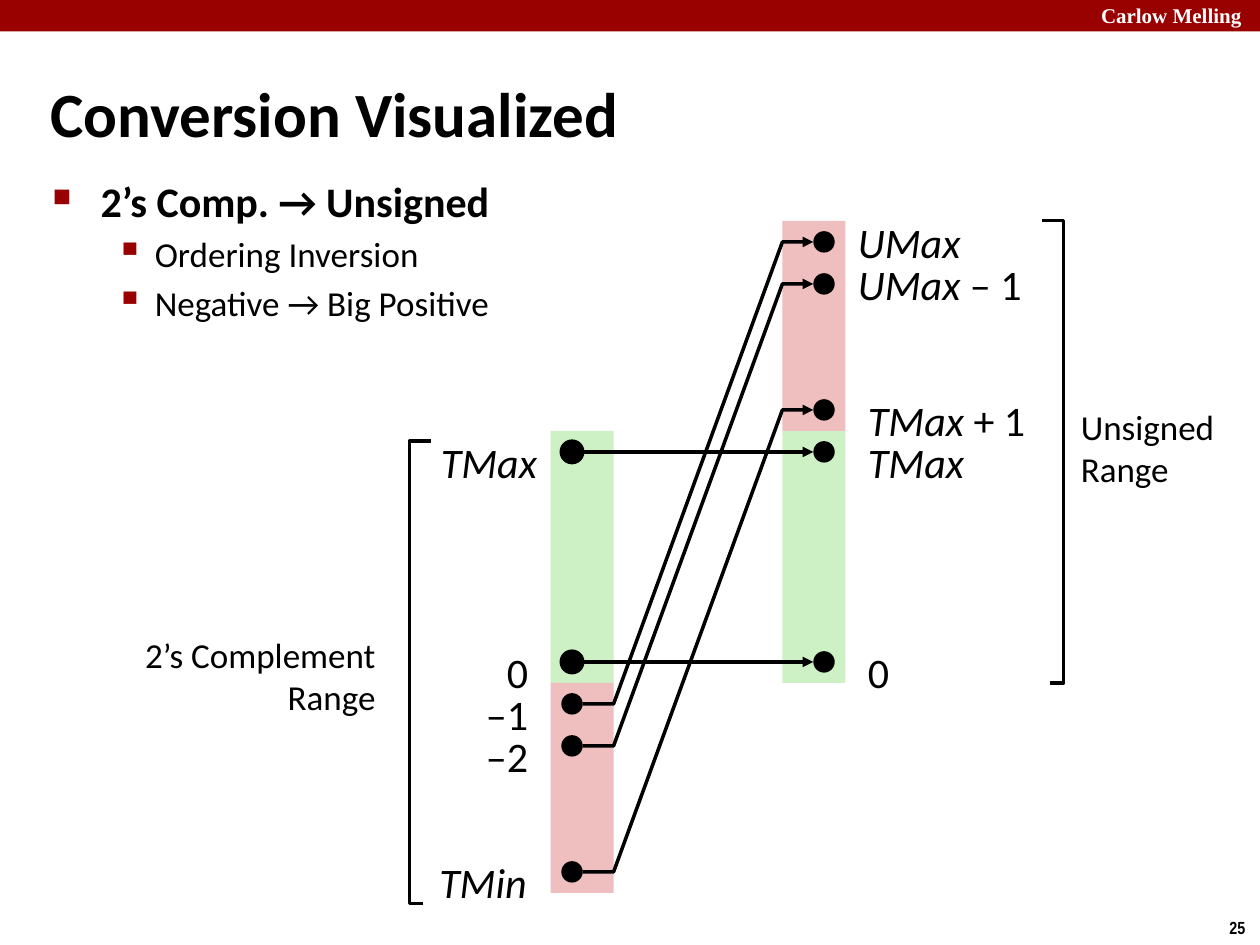
from lxml.etree import SubElement
from pptx import Presentation
from pptx.dml.color import RGBColor
from pptx.enum.shapes import MSO_CONNECTOR, MSO_SHAPE
from pptx.enum.text import MSO_ANCHOR, PP_ALIGN
from pptx.oxml.ns import qn
from pptx.util import Inches, Pt

BLACK, WHITE, RED = "000000", "FFFFFF", "990000"
GREEN_BAND, RED_BAND = "CDF1C5", "EFBFBF"

# The number scale: one row per value, counted down from UMax
FIRST_ROW, ROW = 1.92, 1 / 3
UMAX, UMAX_1, TMAX_1, TMAX, ZERO, MINUS_1, MINUS_2, TMIN = 0, 1, 4, 5, 10, 11, 12, 15
SIGNED_X, UNSIGNED_X, BAR_WIDTH = 4.37, 6.21, 0.5
SIGNED_DOT, UNSIGNED_DOT, DOT = 4.54, 6.54, 0.17

# left edge, first row, last row, colour
BANDS = [
    (UNSIGNED_X, TMAX, ZERO, GREEN_BAND),
    (SIGNED_X, TMAX, ZERO, GREEN_BAND),
    (SIGNED_X, MINUS_1, TMIN, RED_BAND),
    (UNSIGNED_X, UMAX, TMAX_1, RED_BAND),
]
# signed row, unsigned row
MAPPINGS = [(ZERO, ZERO), (TMAX, TMAX), (MINUS_1, UMAX), (MINUS_2, UMAX_1), (TMIN, TMAX_1)]

# row, left, width, rise above the row, italic part, upright part
SIGNED_LABELS = [
    (TMAX, 3.39, 0.97, 0.17, "TMax", ""),
    (ZERO, 3.46, 0.83, 0.17, "", "0"),
    (MINUS_1, 3.46, 0.83, 0.17, "", "–1"),
    (MINUS_2, 3.46, 0.83, 0.17, "", "–2"),
    (TMIN, 3.38, 0.9, 0.17, "TMin", ""),
]
UNSIGNED_LABELS = [
    (UMAX, 6.71, 1.25, 0.25, "UMax", ""),
    (UMAX_1, 6.71, 1.58, 0.25, "UMax", " – 1"),
    (TMAX_1, 6.79, 1.54, 0.17, "TMax", " + 1"),
    (TMAX, 6.79, 0.97, 0.17, "TMax", ""),
    (ZERO, 6.79, 0.83, 0.17, "", "0"),
]
BRACKETS = [
    [(3.36, 7.17), (3.25, 7.17), (3.25, 3.5), (3.42, 3.5)],
    [(8.33, 5.42), (8.44, 5.42), (8.44, 1.75), (8.27, 1.75)],
]
# text, level, size, marker, marker size in percent, left indent, hanging indent
BULLETS = [
    ("2’s Comp. → Unsigned", 0, 24, "■", 60, 0.38, 0.38),
    ("Ordering Inversion", 1, 20, "▪", 110, 0.81, 0.31),
    ("Negative → Big Positive", 1, 20, "▪", 110, 0.81, 0.31),
]

deck = Presentation()
deck.slide_width, deck.slide_height = Inches(10), Inches(7.5)
page = deck.slides.add_slide(deck.slide_layouts[6])


def color(value):
    return RGBColor.from_string(value)


def row_y(row):
    return FIRST_ROW + row * ROW


def add_filled(kind, left, top, width, height, fill, outlined=False):
    shape = page.shapes.add_shape(kind, *map(Inches, (left, top, width, height)))
    shape.shadow.inherit = False
    shape.fill.solid()
    shape.fill.fore_color.rgb = color(fill)
    if outlined:
        style_line(shape)
    else:
        shape.line.fill.background()


def style_line(shape, arrow=False):
    shape.line.color.rgb = color(BLACK)
    shape.line.width = Pt(2)
    if arrow:
        SubElement(shape.line._get_or_add_ln(), qn("a:tailEnd"), type="triangle")


def add_path(points, arrow=False):
    """Draw an open, unfilled line through the points."""
    corners = [(Inches(x), Inches(y)) for x, y in points]
    builder = page.shapes.build_freeform(*corners[0])
    builder.add_line_segments(corners[1:], close=False)
    shape = builder.convert_to_shape()
    shape.shadow.inherit = False
    shape.fill.background()
    style_line(shape, arrow)


def add_arrow(start, end):
    connector = page.shapes.add_connector(
        MSO_CONNECTOR.STRAIGHT, *map(Inches, (*start, *end)))
    style_line(connector, arrow=True)
    SubElement(connector._element.spPr, qn("a:effectLst"))


def style_font(font, size, name="Calibri", fill=BLACK, bold=False, italic=False):
    font.size, font.name, font.bold, font.italic = Pt(size), name, bold, italic
    font.color.rgb = color(fill)


def add_box(left, top, width, height, wrap=True):
    box = page.shapes.add_textbox(*map(Inches, (left, top, width, height)))
    box.text_frame.word_wrap = wrap
    return box.text_frame


def add_text(place, text, size, align=PP_ALIGN.LEFT, wrap=True, **style):
    frame = add_box(*place, wrap=wrap)
    frame.text = text
    for para in frame.paragraphs:
        para.alignment = align
        for span in para.runs:
            style_font(span.font, size, **style)
    return frame


def add_label(label, align):
    row, left, width, rise, italic_part, upright_part = label
    para = add_box(left, row_y(row) - rise, width, 0.51).paragraphs[0]
    para.alignment = align
    for text, italic in ((italic_part, True), (upright_part, False)):
        if text:
            span = para.add_run()
            span.text = text
            style_font(span.font, 24, italic=italic)


def add_bullets(place):
    frame = add_box(*place)
    frame.text = "\n".join(bullet[0] for bullet in BULLETS)
    for para, (_, level, size, marker, percent, indent, hanging) in zip(frame.paragraphs, BULLETS):
        para.level = level
        para.space_before = Pt(size * 0.2)
        style_font(para.runs[0].font, size, bold=level == 0)
        properties = para._p.get_or_add_pPr()
        properties.set("marL", str(Inches(indent)))
        properties.set("indent", str(-Inches(hanging)))
        SubElement(SubElement(properties, qn("a:buClr")), qn("a:srgbClr"), val=RED)
        SubElement(properties, qn("a:buSzPct"), val=str(percent * 1000))
        SubElement(properties, qn("a:buChar"), char=marker)


# Page frame
add_filled(MSO_SHAPE.RECTANGLE, 0, 0, 10, 0.25, RED)
add_text((8.64, -0.03, 1.43, 0.3), "Carlow Melling", 12, wrap=False,
         name="Times New Roman", fill=WHITE, bold=True)
add_text((9.66, 7.23, 0.34, 0.27), "25", 10, wrap=False, name="Arial Narrow", bold=True)

# Number bars and the arrows between them
for left, first, last, fill in BANDS:
    add_filled(MSO_SHAPE.RECTANGLE, left, row_y(first - 0.5),
               BAR_WIDTH, (last - first + 1) * ROW, fill)

for signed, unsigned in MAPPINGS:
    straight = signed == unsigned
    for center, row, outlined in ((SIGNED_DOT, signed, straight), (UNSIGNED_DOT, unsigned, False)):
        add_filled(MSO_SHAPE.OVAL, center - DOT / 2, row_y(row) - DOT / 2,
                   DOT, DOT, BLACK, outlined)
    start = (SIGNED_DOT + DOT / 2, row_y(signed))
    end = (UNSIGNED_DOT - DOT / 2, row_y(unsigned))
    if straight:
        add_arrow(start, end)
    else:
        add_path([start, (SIGNED_X + BAR_WIDTH, start[1]), (UNSIGNED_X, end[1]), end], arrow=True)

# Labels and ranges
for label in SIGNED_LABELS:
    add_label(label, PP_ALIGN.RIGHT)
for label in UNSIGNED_LABELS:
    add_label(label, PP_ALIGN.LEFT)
for bracket in BRACKETS:
    add_path(bracket)
add_text((0.75, 4.98, 2.33, 0.77), "2’s Complement Range", 20, align=PP_ALIGN.RIGHT)
add_text((8.48, 3.17, 1.27, 0.77), "Unsigned\nRange", 20, wrap=False)

# Heading and bullets
title = add_text((0.3, 0.58, 8.69, 0.63), "Conversion Visualized", 36, bold=True)
title.vertical_anchor = MSO_ANCHOR.MIDDLE
add_bullets((0.32, 1.34, 4.55, 1.88))

deck.save("out.pptx")
